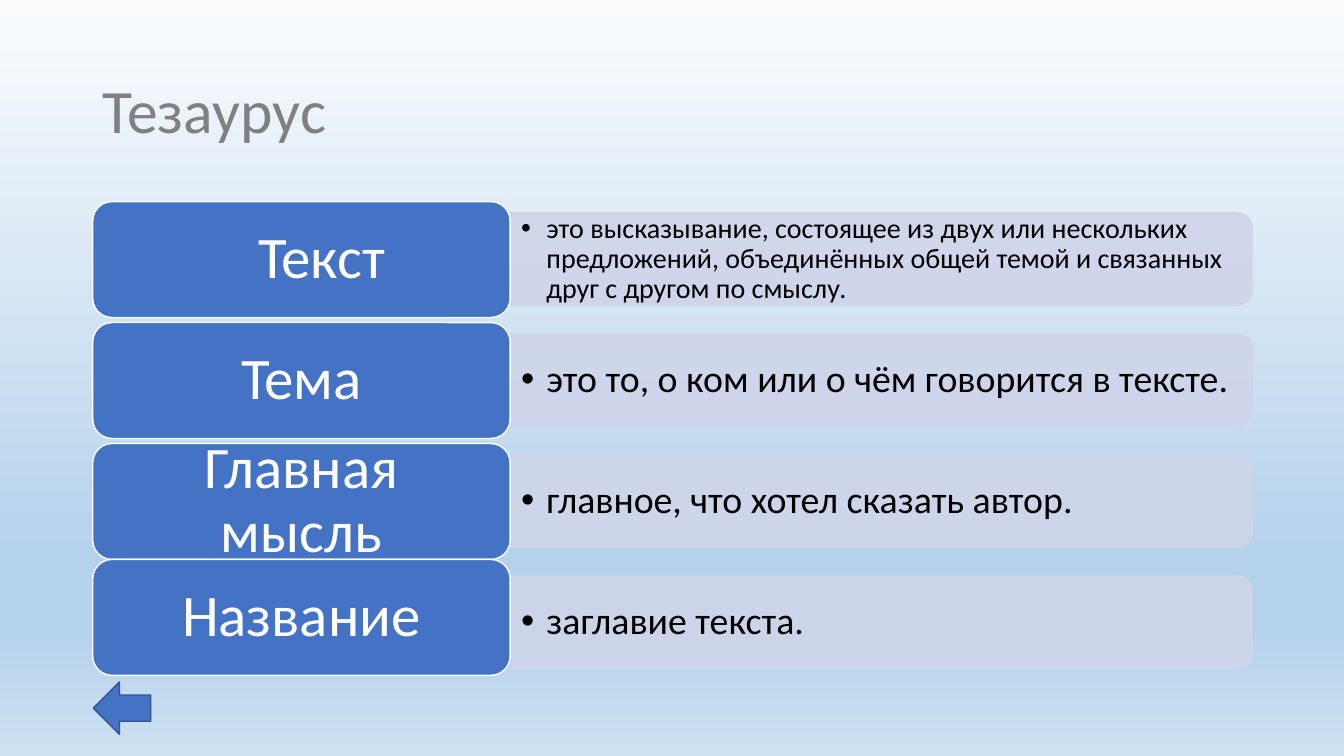
"""Build the glossary slide: four terms with their definitions."""
from lxml import etree
from pptx import Presentation
from pptx.dml.color import RGBColor
from pptx.enum.shapes import MSO_SHAPE
from pptx.enum.text import MSO_ANCHOR, PP_ALIGN
from pptx.oxml.ns import qn
from pptx.util import Inches, Pt

ROUND, PANEL, ARROW = MSO_SHAPE.ROUNDED_RECTANGLE, MSO_SHAPE.ROUND_2_SAME_RECTANGLE, MSO_SHAPE.DOWN_ARROW
MIDDLE, LEFT, CENTER = MSO_ANCHOR.MIDDLE, PP_ALIGN.LEFT, PP_ALIGN.CENTER
COLORS = {"title": "808080", "label": "4472C4", "panel": "CFD5EA", "white": "FFFFFF",
          "text": "000000", "arrow_line": "325491"}
SKY = [(0, "FAFCFE"), (74, "B5D2EC"), (83, "B5D2EC"), (100, "CEE1F2")]
ROWS = [("Текст", 2, 0.4, 20, "это высказывание, состоящее из двух или нескольких предложений, "
         "объединённых общей темой и связанных друг с другом по смыслу."),
        ("Тема", 3.2, 0, 27, "это то, о ком или о чём говорится в тексте."),
        ("Главная мысль", 4.4, 0, 27, "главное, что хотел сказать автор."),
        ("Название", 5.55, 0, 27, "заглавие текста.")]
X, LABEL_W, LABEL_H = 0.92, 4.14, 1.15
PANEL_X, PANEL_W, PANEL_H = X + LABEL_W, 7.36, 0.92
TOP, PITCH = 2.11, 1.2


def add_block(kind, box, fill, line, rotation=0, alpha=100):
    sp = s.shapes.add_shape(kind, *map(Inches, box))
    sp.rotation = rotation
    sp.shadow.inherit = False
    sp.fill.solid()
    sp.fill.fore_color.rgb = RGBColor.from_string(COLORS[fill])
    sp.line.color.rgb = RGBColor.from_string(COLORS[line])
    sp.line.width = Pt(1)
    if alpha < 100:
        for clr in sp._element.spPr.iter(qn("a:srgbClr")):
            etree.SubElement(clr, qn("a:alpha"), val=str(alpha * 1000))
    return sp


def write(sp, text, size, color, align=LEFT, inset=(0.1, 0.05)):
    tf = sp.text_frame
    dx, dy = map(Inches, inset)
    frame = {"word_wrap": True, "vertical_anchor": MIDDLE, "margin_left": dx,
             "margin_right": dx, "margin_top": dy, "margin_bottom": dy}
    for name, value in frame.items():
        setattr(tf, name, value)
    p = tf.paragraphs[0]
    p.alignment, p.line_spacing = align, 0.9
    r = p.add_run()
    r.text = text
    for name, value in {"name": "Calibri", "size": Pt(size)}.items():
        setattr(r.font, name, value)
    r.font.color.rgb = RGBColor.from_string(COLORS[color])
    return p._p.get_or_add_pPr()


prs = Presentation()
prs.slide_width, prs.slide_height = Inches(13.33), Inches(7.5)
s = prs.slides.add_slide(prs.slide_layouts[6])

s.background.fill.gradient()
grad = s.background._cSld.find(".//" + qn("a:gradFill"))
stops = grad.find(qn("a:gsLst"))
for old in list(stops):
    stops.remove(old)
for pos, color in SKY:
    stop = etree.SubElement(stops, qn("a:gs"), pos=str(pos * 1000))
    etree.SubElement(stop, qn("a:srgbClr"), val=color)
s.background.fill.gradient_angle = 270

title = s.shapes.add_textbox(*map(Inches, (X, 0.4, 11.5, 1.45)))
write(title, "Тезаурус", 44, "title")

for i, (term, label_y, indent, size, meaning) in enumerate(ROWS):
    y = TOP + i * PITCH
    turned = (PANEL_X + (PANEL_W - PANEL_H) / 2, y + (PANEL_H - PANEL_W) / 2, PANEL_H, PANEL_W)
    add_block(PANEL, turned, "panel", "panel", 90, 90)

    note = s.shapes.add_textbox(*map(Inches, (PANEL_X, y + 0.05, PANEL_W - 0.04, PANEL_H - 0.09)))
    pPr = write(note, meaning, size, "text", inset=(0.11, 0.06))
    pPr.set("marL", str(Inches(0.25)))
    pPr.set("indent", str(-Inches(0.25)))
    etree.SubElement(pPr, qn("a:buFont"), typeface="Arial")
    etree.SubElement(pPr, qn("a:buChar"), char="•")

    label = add_block(ROUND, (X, label_y, LABEL_W, LABEL_H), "label", "white")
    pPr = write(label, term, 42, "white", CENTER, (0.2, 0.1))
    pPr.set("marL", str(Inches(indent)))

add_block(ARROW, (0.95, 6.74, 0.52, 0.57), "label", "arrow_line", 90)

prs.save("out.pptx")
